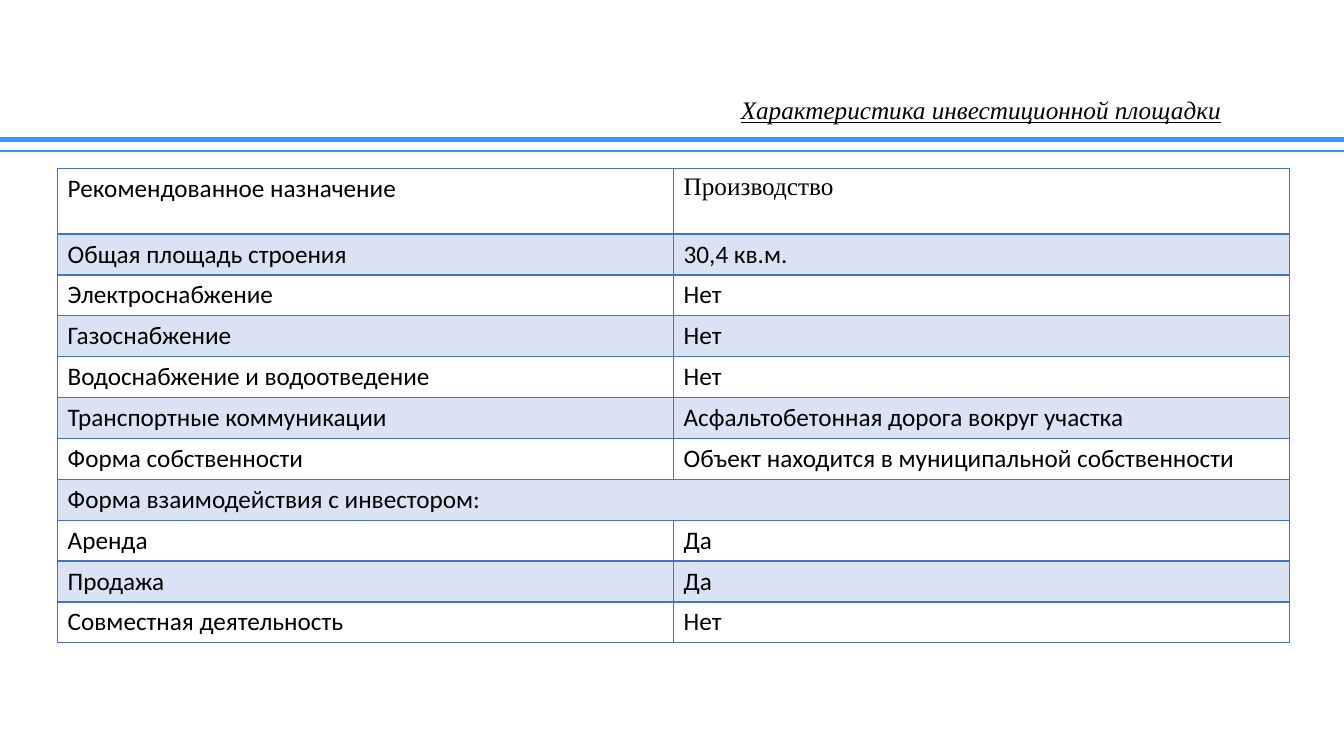
from lxml import etree
from pptx import Presentation
from pptx.dml.color import RGBColor
from pptx.enum import shapes, text
from pptx.oxml import ns
from pptx.util import Pt

BLACK = RGBColor(0x00, 0x00, 0x00)
RULE_BLUE = RGBColor(0x33, 0x99, 0xFF)
BORDER_BLUE = RGBColor(0x44, 0x72, 0xC4)
BAND_BLUE = RGBColor(0xDA, 0xE3, 0xF3)

SLIDE_WIDTH, SLIDE_HEIGHT = 960, 540
FIRST_ROW_HEIGHT, ROW_HEIGHT, COLUMN_WIDTH = 47, 29.2, 440
SECTION_ROW = 7

SITE_FACTS = [
    ("Рекомендованное назначение", "Производство"),
    ("Общая площадь строения", "30,4 кв.м."),
    ("Электроснабжение", "Нет"),
    ("Газоснабжение", "Нет"),
    ("Водоснабжение и водоотведение", "Нет"),
    ("Транспортные коммуникации", "Асфальтобетонная дорога вокруг участка"),
    ("Форма собственности", "Объект находится в муниципальной собственности"),
    ("Форма взаимодействия с инвестором:", ""),
    ("Аренда", "Да"),
    ("Продажа", "Да"),
    ("Совместная деятельность", "Нет"),
]


def add_border(cell, side, width):
    """Draw one cell edge; side is L, R, T or B and width is in points."""
    properties = cell._tc.get_or_add_tcPr()
    line = etree.SubElement(properties, ns.qn(f"a:ln{side}"), w=str(Pt(width)))
    fill = etree.SubElement(line, ns.qn("a:solidFill"))
    etree.SubElement(fill, ns.qn("a:srgbClr"), val=str(BORDER_BLUE))


def format_text(paragraph, font_name):
    for run in paragraph.runs:
        run.font.name = font_name
        run.font.size = Pt(18)
        run.font.color.rgb = BLACK


presentation = Presentation()
presentation.slide_width = Pt(SLIDE_WIDTH)
presentation.slide_height = Pt(SLIDE_HEIGHT)
slide = presentation.slides.add_slide(presentation.slide_layouts[5])

# Double rule under the title
for top, width in [(99.4, 3.5), (108, 1.5)]:
    rule = slide.shapes.add_connector(
        shapes.MSO_CONNECTOR.STRAIGHT, Pt(0), Pt(top), Pt(SLIDE_WIDTH), Pt(top)
    )
    rule.line.color.rgb = RULE_BLUE
    rule.line.width = Pt(width)
    etree.SubElement(rule._element.spPr, ns.qn("a:effectLst"))

# Title
title = slide.shapes.title
title.left, title.top, title.width, title.height = Pt(480), Pt(69.8), Pt(441.4), Pt(19.4)
title.text_frame.text = "Характеристика инвестиционной площадки"
title.text_frame.auto_size = text.MSO_AUTO_SIZE.NONE
title.text_frame.vertical_anchor = text.MSO_ANCHOR.MIDDLE
title_paragraph = title.text_frame.paragraphs[0]
title_paragraph.alignment = text.PP_ALIGN.CENTER
title_paragraph.line_spacing = 0.9
format_text(title_paragraph, "Times New Roman")
title_font = title_paragraph.runs[0].font
title_font.italic = True
title_font.underline = True

# Table of site facts
row_count = len(SITE_FACTS)
table = slide.shapes.add_table(
    row_count, 2, Pt(41.2), Pt(120.2), Pt(2 * COLUMN_WIDTH),
    Pt(FIRST_ROW_HEIGHT + (row_count - 1) * ROW_HEIGHT),
).table
table.first_row = False
table.horz_banding = False
for column in table.columns:
    column.width = Pt(COLUMN_WIDTH)

for row_index, facts in enumerate(SITE_FACTS):
    table.rows[row_index].height = Pt(ROW_HEIGHT if row_index else FIRST_ROW_HEIGHT)
    for column_index, fact in enumerate(facts):
        cell = table.cell(row_index, column_index)
        for side in "LRTB":
            under_first_row = (row_index, side) in [(0, "B"), (1, "T")]
            add_border(cell, side, 2 if under_first_row else 1)
        if row_index % 2:
            cell.fill.solid()
            cell.fill.fore_color.rgb = BAND_BLUE
        else:
            cell.fill.background()
        cell.text_frame.text = fact
        is_purpose = (row_index, column_index) == (0, 1)
        format_text(
            cell.text_frame.paragraphs[0],
            "Times New Roman" if is_purpose else "Calibri",
        )

table.cell(SECTION_ROW, 0).merge(table.cell(SECTION_ROW, 1))

presentation.save("out.pptx")
